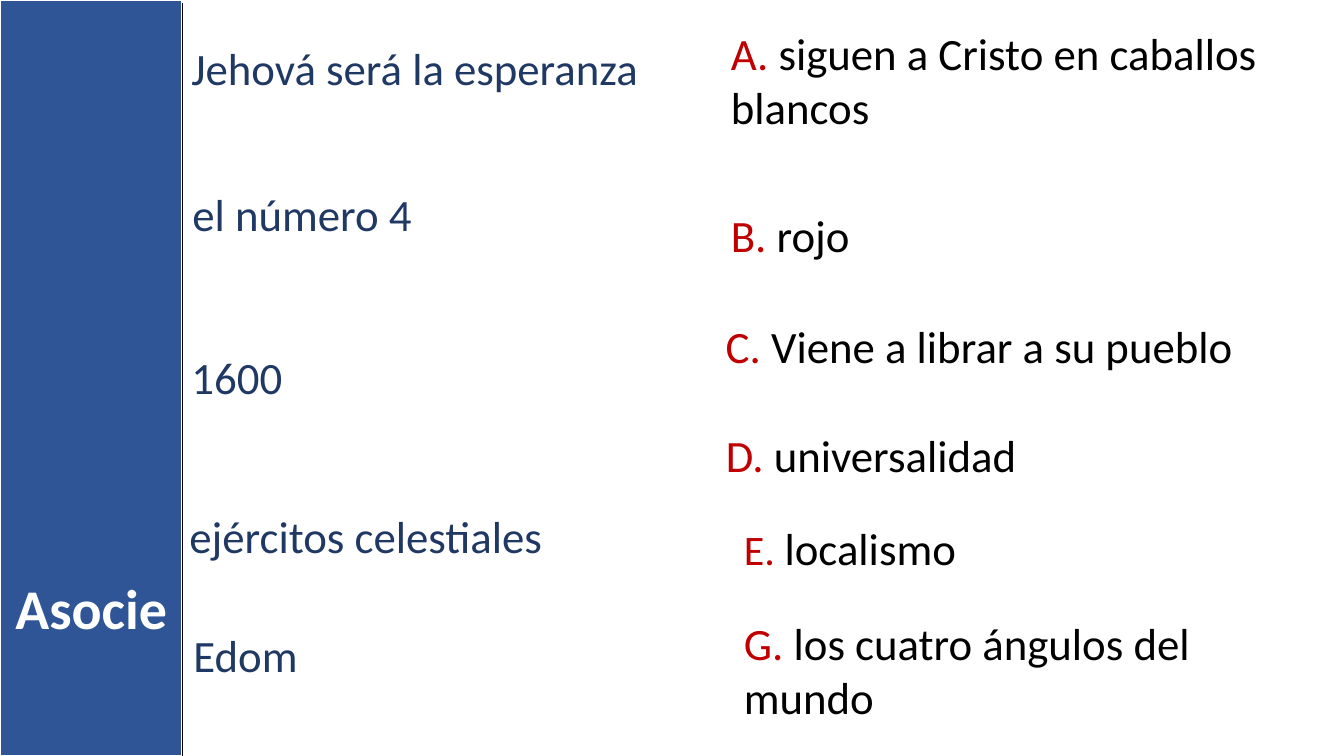
from lxml import etree
from pptx import Presentation
from pptx import util as u
from pptx.dml import color
from pptx.enum import shapes, text
from pptx.oxml import ns

BLUE, NAVY, RED = "2F5597", "203864", "C00000"
BLACK, WHITE = "000000", "FFFFFF"
BAND_WIDTH = 1.81


def rgb(value):
    return color.RGBColor.from_string(value)


class MatchingSlide:
    """Holds the text style and the current slide."""

    font = "Calibri"
    size = 32

    def __init__(self, presentation):
        layout = presentation.slide_layouts.get_by_name("Title Only")
        self.slide = presentation.slides.add_slide(layout)

    def add_run(self, paragraph, words, hex_color, size=None, bold=False):
        run = paragraph.add_run()
        run.text = words
        run.font.name = self.font
        run.font.size = u.Pt(size or self.size)
        run.font.bold = bold
        run.font.color.rgb = rgb(hex_color)

    def band(self, left, top, width, height):
        shape = self.slide.shapes.add_shape(
            shapes.MSO_SHAPE.RECTANGLE, *map(u.Inches, (left, top, width, height)))
        shape.shadow.inherit = False
        shape.fill.solid()
        shape.fill.fore_color.rgb = rgb(BLUE)
        shape.line.color.rgb = rgb(WHITE)
        shape.line.width = u.Pt(1.5)
        # Keep the band behind the title
        self.slide.shapes.title.element.addprevious(shape.element)

    def title(self, words, left, top, width, height):
        shape = self.slide.shapes.title
        shape.left, shape.top = u.Inches(left), u.Inches(top)
        shape.width, shape.height = u.Inches(width), u.Inches(height)
        frame = shape.text_frame
        frame.auto_size = text.MSO_AUTO_SIZE.NONE
        frame.vertical_anchor = text.MSO_ANCHOR.TOP
        paragraph = frame.paragraphs[0]
        paragraph.alignment = text.PP_ALIGN.CENTER
        self.add_run(paragraph, words, WHITE, 40, bold=True)

    def text_box(self, left, top, width, height, runs):
        shape = self.slide.shapes.add_textbox(
            *map(u.Inches, (left, top, width, height)))
        frame = shape.text_frame
        frame.word_wrap = True
        frame.auto_size = text.MSO_AUTO_SIZE.SHAPE_TO_FIT_TEXT
        for run in runs:
            self.add_run(frame.paragraphs[0], *run)

    def rule(self, left, top, bottom):
        connector = self.slide.shapes.add_connector(
            shapes.MSO_CONNECTOR.STRAIGHT,
            *map(u.Inches, (left, top, left, bottom)))
        connector.line.color.rgb = rgb(BLACK)
        connector.line.width = u.Pt(1)
        properties = connector.element.find(ns.qn("p:spPr"))
        etree.SubElement(properties, ns.qn("a:effectLst"))


def main():
    presentation = Presentation()
    presentation.slide_width = u.Inches(13.33)
    presentation.slide_height = u.Inches(7.5)
    matching = MatchingSlide(presentation)

    # Side band with the title
    matching.band(0, 0, BAND_WIDTH, 7.5)
    matching.title("Asocie", 0, 5.64, BAND_WIDTH, 0.77)

    # Terms to match
    terms = [
        ("Jehová será la esperanza", 1.8, 0.35, 5.1),
        ("el número 4", 1.81, 1.8, 4.93),
        ("1600", 1.8, 3.42, 4.89),
        ("ejércitos celestiales", 1.78, 5, 5.1),
        ("Edom", 1.82, 6.18, 4.41),
    ]
    for words, left, top, width in terms:
        matching.text_box(left, top, width, 0.64, [(words, NAVY)])

    # Lettered answers
    answers = [
        ("A. ", 32, "siguen a Cristo en caballos blancos", 7.15, 0.21, 5.85, 1.18),
        ("B. ", 32, "rojo", 7.15, 2.01, 5.76, 0.64),
        ("C. ", 32, "Viene a librar a su pueblo", 7.1, 3.11, 5.8, 0.64),
        ("D. ", 32, "universalidad", 7.1, 4.19, 5.78, 0.64),
        ("E. ", 30, "localismo", 7.28, 5.12, 6.05, 0.64),
        ("G. ", 32, "los cuatro ángulos del mundo", 7.28, 6.06, 5.76, 1.18),
    ]
    for letter, letter_size, words, left, top, width, height in answers:
        matching.text_box(left, top, width, height,
                          [(letter, RED, letter_size), (words, BLACK)])

    # Edge of the band
    matching.rule(BAND_WIDTH, 0.03, 7.5)

    presentation.save("out.pptx")


if __name__ == "__main__":
    main()
